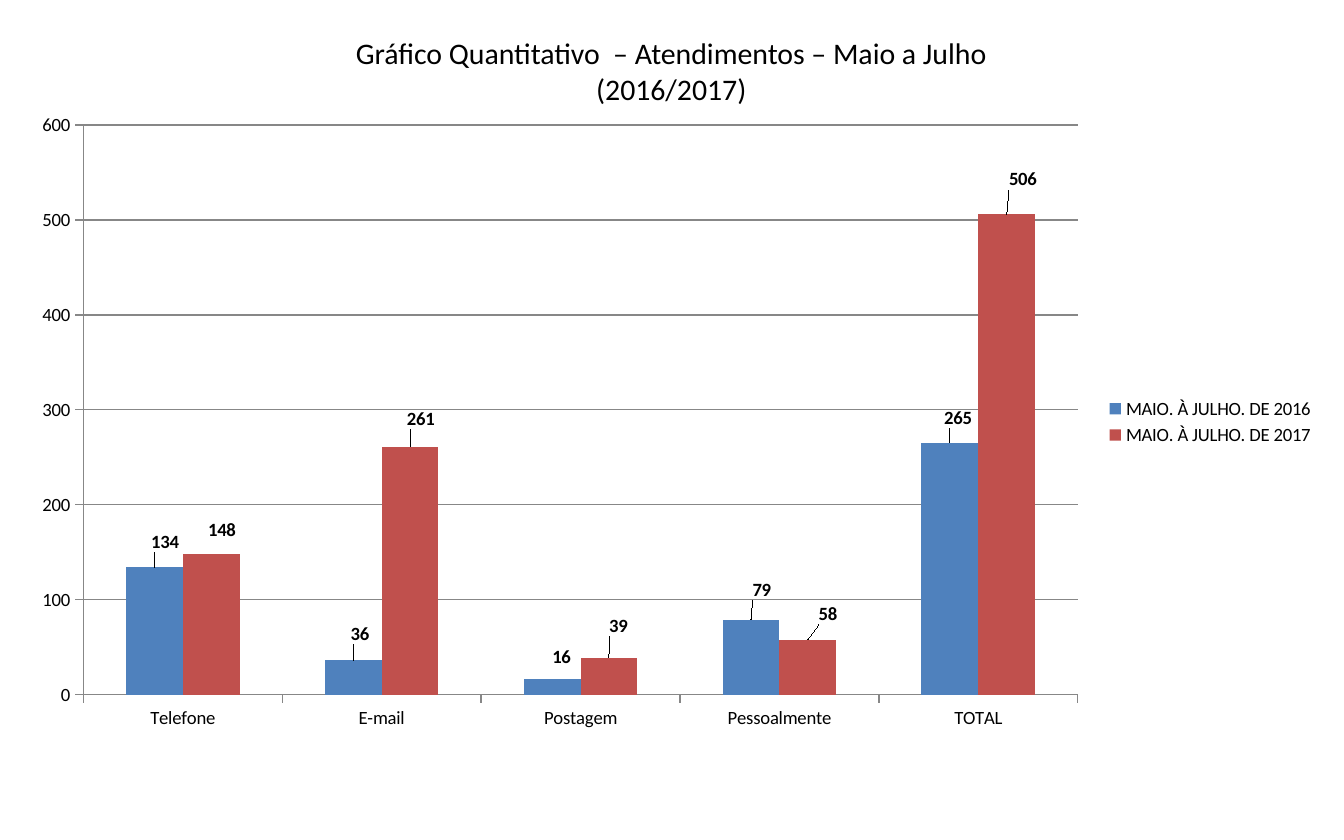
from lxml import etree
from pptx import Presentation
from pptx.chart.data import CategoryChartData
from pptx.dml.color import RGBColor
from pptx.enum.chart import XL_CHART_TYPE, XL_LABEL_POSITION, XL_LEGEND_POSITION, XL_TICK_MARK
from pptx.enum.text import PP_ALIGN
from pptx.oxml.ns import qn
from pptx.util import Inches, Pt

CLUSTERED = XL_CHART_TYPE.COLUMN_CLUSTERED
OUTSIDE_END = XL_LABEL_POSITION.OUTSIDE_END
LEGEND_RIGHT = XL_LEGEND_POSITION.RIGHT
TICK_OUTSIDE = XL_TICK_MARK.OUTSIDE
CENTER = PP_ALIGN.CENTER

BLACK = RGBColor(0x00, 0x00, 0x00)
GRAY = RGBColor(0x87, 0x87, 0x87)
BLUE = RGBColor(0x4F, 0x81, 0xBD)
RED = RGBColor(0xC0, 0x50, 0x4D)
FONT = "Calibri"

TITLE = "Gráfico Quantitativo  – Atendimentos – Maio a Julho (2016/2017)"
CHANNELS = ["Telefone", "E-mail", "Postagem", "Pessoalmente", "TOTAL"]
CHART_WIDTH, CHART_HEIGHT = 9.76, 4.76
PERIODS = [
    ("MAIO. À JULHO. DE 2016", BLUE, [134, 36, 16, 79, 265],
     [(0.08, -0.07), (0.05, -0.08), (0.07, -0.05), (0.08, -0.1), (0.06, -0.07)]),
    ("MAIO. À JULHO. DE 2017", RED, [148, 261, 39, 58, 506],
     [(0.08, -0.06), (0.08, -0.09), (0.07, -0.12), (0.15, -0.07), (0.12, -0.14)]),
]


def style_font(font, size):
    """Apply the slide's typeface, colour and a size in points."""
    font.name = FONT
    font.size = Pt(size)
    font.color.rgb = BLACK


def make_layout(**settings):
    """Return a chart layout element; lengths in inches become chart fractions."""
    layout = etree.Element(qn("c:layout"))
    manual = etree.SubElement(layout, qn("c:manualLayout"))
    extents = {"x": CHART_WIDTH, "w": CHART_WIDTH, "y": CHART_HEIGHT, "h": CHART_HEIGHT}
    for tag, value in settings.items():
        if tag in extents:
            value = value / extents[tag]
        etree.SubElement(manual, qn(f"c:{tag}")).set("val", str(value))
    return layout


def add_title(slide):
    """Add the centred heading."""
    heading = slide.shapes.add_textbox(Inches(2.22), Inches(0.21), Inches(5.55), Inches(0.64))
    heading.text_frame.word_wrap = True
    paragraph = heading.text_frame.paragraphs[0]
    paragraph.text = TITLE
    paragraph.alignment = CENTER
    style_font(paragraph.font, 16)


def style_axes(chart):
    """Set the scale, grid lines, ticks and axis lines."""
    scale = chart.value_axis
    scale.minimum_scale, scale.maximum_scale, scale.major_unit = 0, 600, 100
    scale.has_major_gridlines = True
    scale.major_gridlines.format.line.color.rgb = GRAY
    for axis in (scale, chart.category_axis):
        axis.major_tick_mark = TICK_OUTSIDE
        axis.format.line.color.rgb = GRAY


def style_period(series, color, offsets):
    """Colour one period's columns and place their bold value labels."""
    series.format.fill.solid()
    series.format.fill.fore_color.rgb = color
    series.invert_if_negative = False
    labels = series.data_labels
    labels.show_value = True
    labels.position = OUTSIDE_END
    style_font(labels.font, 10)
    labels.font.bold = True
    for index, (dx, dy) in enumerate(offsets):
        label = series.points[index].data_label
        label.position = OUTSIDE_END
        style_font(label.font, 10)
        label.font.bold = True
        marker = labels._element.findall(qn("c:dLbl"))[index].find(qn("c:idx"))
        marker.addnext(make_layout(x=dx, y=dy))


def add_attendance_chart(slide):
    """Add the column chart comparing both periods by channel."""
    data = CategoryChartData()
    data.categories = CHANNELS
    for name, _, counts, _ in PERIODS:
        data.add_series(name, counts)
    chart = slide.shapes.add_chart(
        CLUSTERED, Inches(0.12), Inches(0.76),
        Inches(CHART_WIDTH), Inches(CHART_HEIGHT), data).chart
    style_font(chart.font, 10)
    chart.has_title = False
    chart.has_legend = True
    chart.legend.position = LEGEND_RIGHT
    chart.legend.include_in_layout = False
    style_axes(chart)
    columns = chart.plots[0]
    columns.gap_width = 150
    columns.overlap = 0
    columns.vary_by_categories = False
    for series, (_, color, _, offsets) in zip(columns.series, PERIODS):
        style_period(series, color, offsets)
    plot_area = chart._chartSpace.chart.plotArea
    for layout in plot_area.findall(qn("c:layout")):
        plot_area.remove(layout)
    plot_area.insert(0, make_layout(
        layoutTarget="inner", xMode="edge", yMode="edge", x=0.5, y=0.17, w=7.4, h=4.24))


def main():
    """Build and save the slide."""
    deck = Presentation()
    deck.slide_width, deck.slide_height = Inches(10), Inches(6.25)
    slide = deck.slides.add_slide(deck.slide_layouts[6])
    add_attendance_chart(slide)
    add_title(slide)
    deck.save("out.pptx")


if __name__ == "__main__":
    main()
